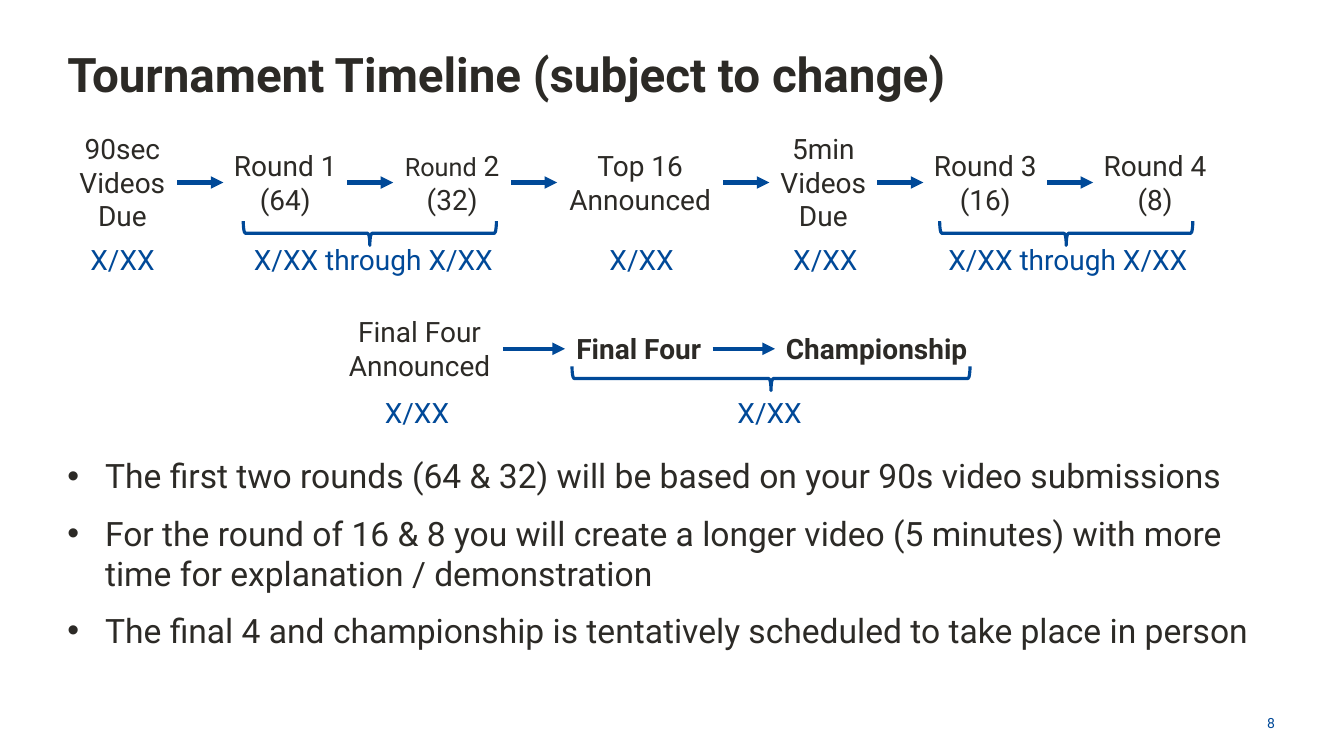
from lxml import etree
from pptx import Presentation
from pptx.dml.color import RGBColor
from pptx.enum.shapes import MSO_CONNECTOR, MSO_SHAPE
from pptx.enum.text import MSO_ANCHOR, MSO_AUTO_SIZE, PP_ALIGN
from pptx.oxml.ns import qn
from pptx.util import Cm, Pt

INK = RGBColor(0x2C, 0x2A, 0x26)
BLUE = RGBColor(0x00, 0x49, 0x98)
LEFT, CENTER, RIGHT = PP_ALIGN.LEFT, PP_ALIGN.CENTER, PP_ALIGN.RIGHT
MIDDLE = MSO_ANCHOR.MIDDLE
FIT, FIXED = MSO_AUTO_SIZE.SHAPE_TO_FIT_TEXT, MSO_AUTO_SIZE.NONE
STRAIGHT = MSO_CONNECTOR.STRAIGHT
BRACE = MSO_SHAPE.RIGHT_BRACE

prs = Presentation()
prs.slide_width, prs.slide_height = Cm(33.87), Cm(19.05)
slide = prs.slides.add_slide(prs.slide_layouts[5])
shapes = slide.shapes


def style(frame, size, color, align=LEFT, bold=False):
    frame.word_wrap = True
    for para in frame.paragraphs:
        para.alignment = align
        for run in para.runs:
            font = run.font
            font.name, font.size, font.bold = "Roboto", Pt(size), bold
            font.color.rgb = color


def add_text(text, left, top, width, height, size, color, align=LEFT, bold=False):
    box = shapes.add_textbox(Cm(left), Cm(top), Cm(width), Cm(height))
    box.text_frame.text = text
    style(box.text_frame, size, color, align, bold)
    return box


# Title
title = shapes.title
title.left, title.top, title.width, title.height = Cm(1.7), Cm(1.02), Cm(30.45), Cm(1.65)
frame = title.text_frame
frame.text = "Tournament Timeline (subject to change)"
frame.auto_size, frame.vertical_anchor, frame.margin_left = FIXED, MIDDLE, 0
style(frame, 34, INK, bold=True)

# Timeline rows: start, middle height, gap, steps (text, width, lines, bold)
rows = [
    (1.7, 4.6, 1.16, [
        ("90sec Videos Due", 2.77, 3, False),
        ("Round 1 (64)", 3.12, 2, False),
        ("Round 2 (32)", 2.97, 2, False),
        ("Top 16 Announced", 4.19, 2, False),
        ("5min Videos Due", 2.72, 3, False),
        ("Round 3 (16)", 3.12, 2, False),
        ("Round 4 (8)", 3.12, 2, False),
    ]),
    (8.48, 8.79, 1.57, [
        ("Final Four Announced", 4.19, 2, False),
        ("Final Four", 3.72, 1, True),
        ("Championship", 5.13, 1, True),
    ]),
]
steps = {}
for left, mid, gap, row in rows:
    last = None
    for text, width, lines, bold in row:
        height = 1.12 + 0.85 * (lines - 1)
        box = add_text(text, left, mid - height / 2, width, height, 20, INK, CENTER, bold)
        box.text_frame.auto_size = FIT
        steps[text] = box
        if last is not None:
            arrow = shapes.add_connector(STRAIGHT, 0, 0, 0, 0)
            arrow.begin_connect(last, 3)
            arrow.end_connect(box, 1)
            arrow.line.color.rgb, arrow.line.width = BLUE, Pt(3)
            etree.SubElement(arrow.line._get_or_add_ln(), qn("a:tailEnd"), type="triangle")
            etree.SubElement(arrow._element.spPr, qn("a:effectLst"))
        last = box
        left += width + gap

# The second round has a smaller first word
frame = steps["Round 2 (32)"].text_frame
para = frame.paragraphs[0]
para.text = "Round"
para.add_run().text = " 2 (32)"
style(frame, 20, INK, CENTER)
para.runs[0].font.size = Pt(18)

# Dates
for text, left, top, width, align in [
    ("X/XX", 2.03, 5.99, 2.21, LEFT),
    ("X/XX through X/XX", 6.15, 5.99, 6.73, LEFT),
    ("X/XX", 15.11, 5.99, 2.29, LEFT),
    ("X/XX", 19.74, 5.99, 2.21, LEFT),
    ("X/XX through X/XX", 23.65, 5.99, 6.68, LEFT),
    ("X/XX", 9.45, 9.83, 2.29, LEFT),
    ("X/XX", 18.01, 9.83, 2.77, CENTER),
]:
    date = add_text(text, left, top, width, 1.12, 20, BLUE, align)
    date.text_frame.auto_size = FIT

# Braces, given by their centre and span
DEPTH = 0.61
for x, y, span in [(9.32, 5.88, 6.38), (26.87, 5.88, 6.38), (19.43, 9.54, 10.03)]:
    brace = shapes.add_shape(BRACE, Cm(x - DEPTH / 2), Cm(y - span / 2), Cm(DEPTH), Cm(span))
    brace.rotation = 90
    brace.shadow.inherit = False
    brace.fill.background()
    brace.line.color.rgb, brace.line.width = BLUE, Pt(2.25)

# Notes on the rounds
points = [
    "The first two rounds (64 & 32) will be based on your 90s video submissions",
    "For the round of 16 & 8 you will create a longer video (5 minutes) with more "
    "time for explanation / demonstration",
    "The final 4 and championship is tentatively scheduled to take place in person",
]
body = add_text("\n".join(points), 1.7, 11.35, 30.45, 6.45, 24, INK)
body.text_frame.margin_left = 0
for i, para in enumerate(body.text_frame.paragraphs):
    props = para._p.get_or_add_pPr()
    props.set("marL", str(Cm(0.95)))
    props.set("indent", str(-Cm(0.95)))
    etree.SubElement(props, qn("a:buFont"), typeface="Arial")
    etree.SubElement(props, qn("a:buChar"), char="•")
    para.space_before = Pt(12 if i else 0)

# Page number
page = add_text("8", 31.06, 17.7, 1.07, 1.02, 10, BLUE, RIGHT)
frame = page.text_frame
frame.vertical_anchor = MIDDLE
frame.margin_left = frame.margin_right = frame.margin_top = frame.margin_bottom = 0

prs.save("out.pptx")
